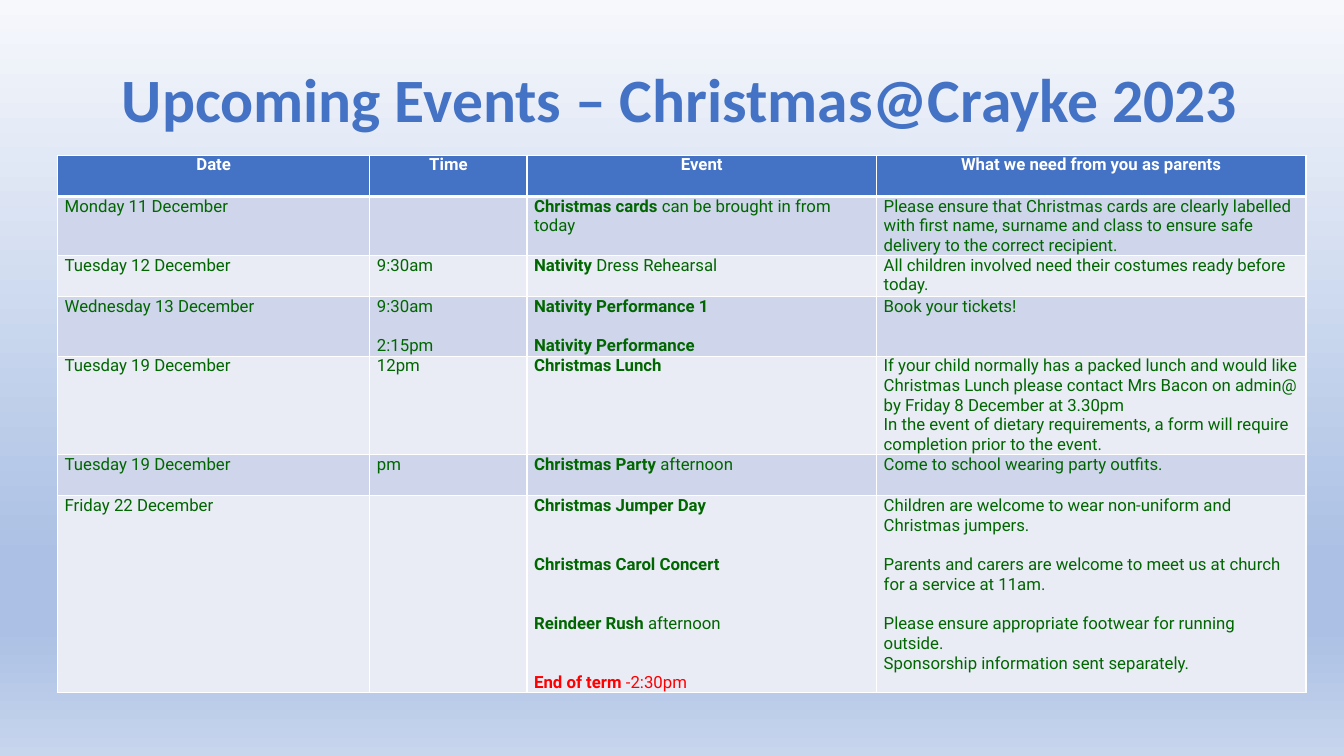
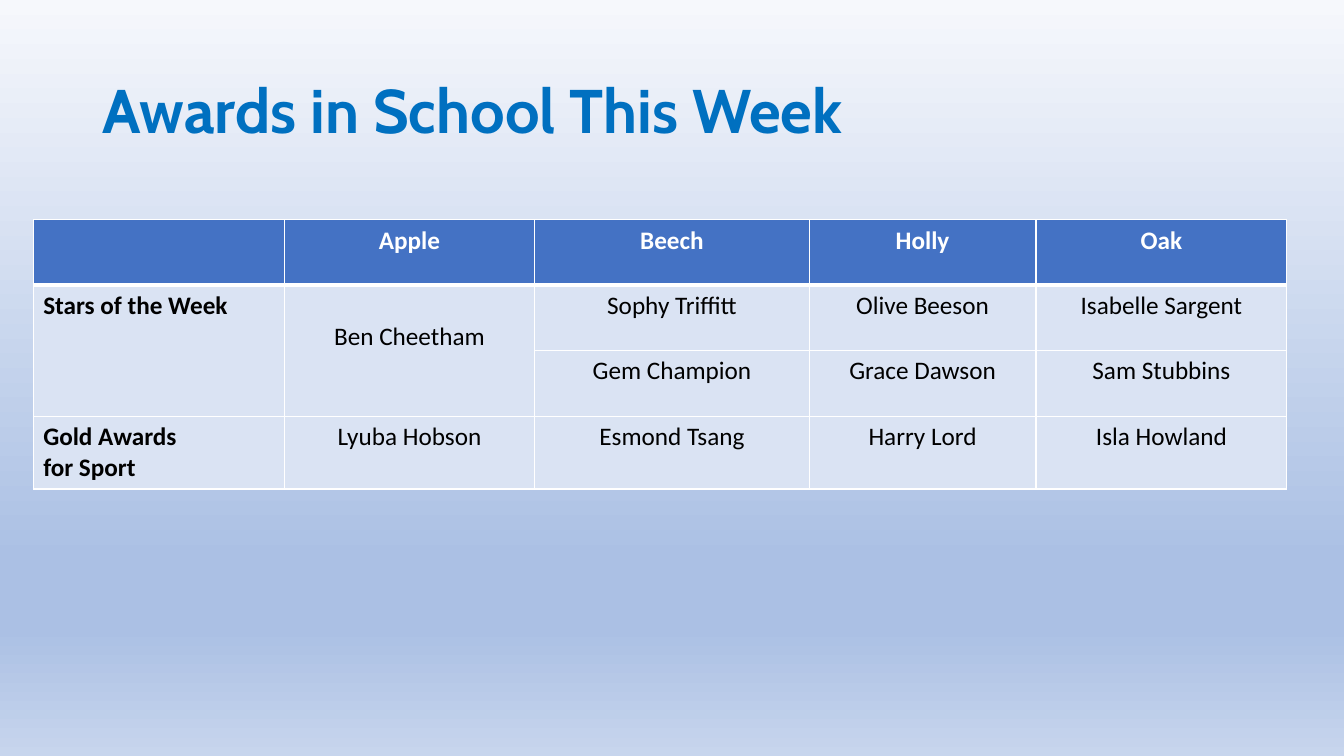
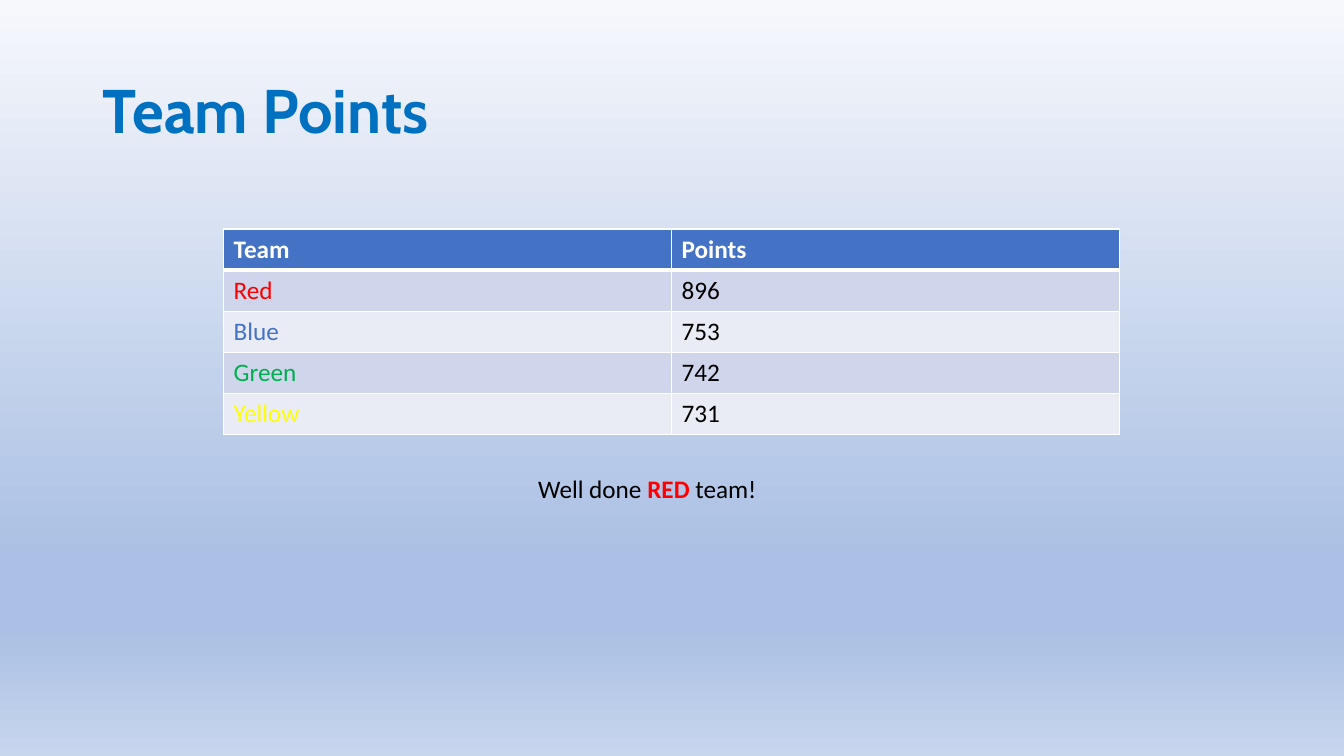
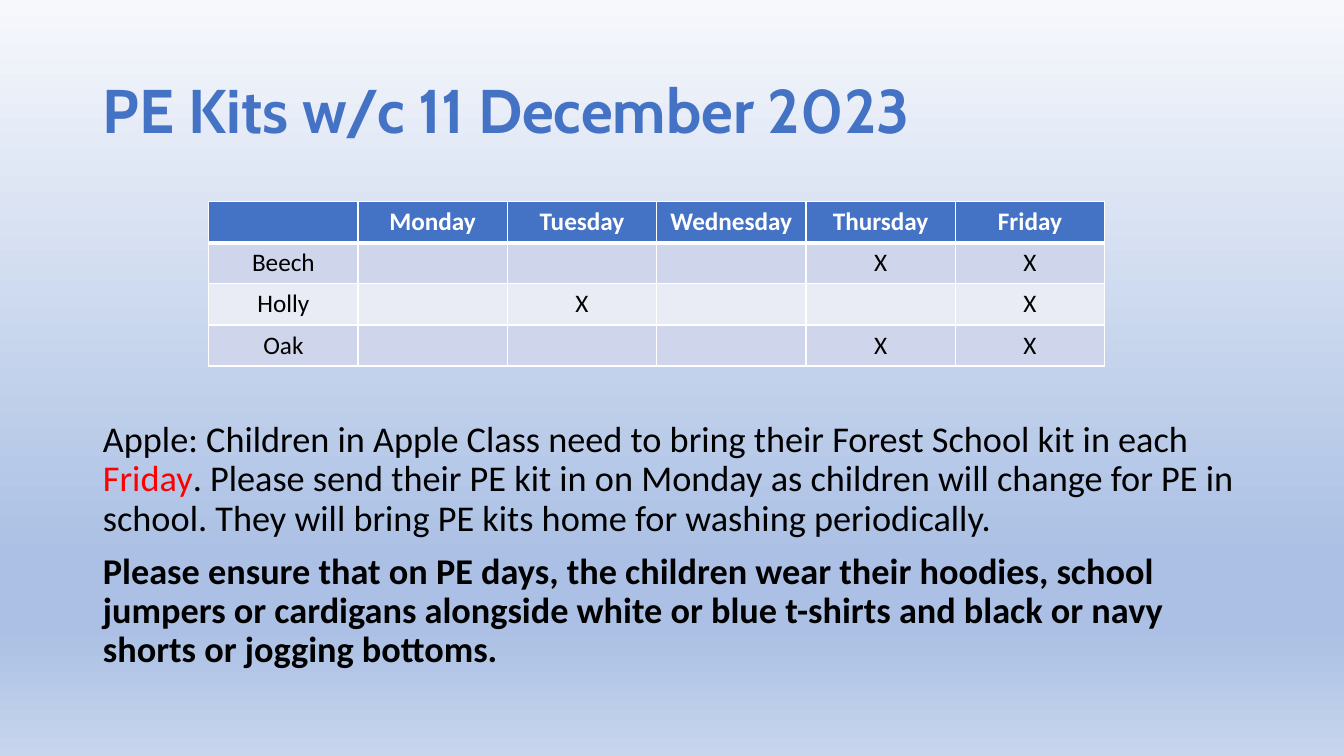
"""Build the four weekly school notice slides."""
from dataclasses import dataclass

from lxml import etree
from pptx import Presentation
from pptx import util as u
from pptx.dml.color import RGBColor
from pptx.enum import text
from pptx.oxml.ns import qn

COLOURS = {
    "head": "4472C4", "title": "0070C0", "white": "FFFFFF", "black": "000000",
    "band": "CFD5EA", "pale": "E9EBF5", "award": "DAE3F3", "festive": "006600",
    "red": "FF0000", "green": "00B050", "yellow": "FFFF00",
    "sky": "F6F8FC", "dusk": "ABC0E4", "mist": "C7D5ED",
}
BACKDROP = [(0, "sky"), (74, "dusk"), (83, "dusk"), (100, "mist")]
LEFT, CENTRE = text.PP_ALIGN.LEFT, text.PP_ALIGN.CENTER
BLANK_LINE = 14.06


@dataclass
class Box:
    """A region of the page, in centimetres."""
    left: float
    top: float
    width: float
    height: float

    def place(self):
        """Return the box as lengths."""
        return [u.Cm(n) for n in (self.left, self.top, self.width, self.height)]


@dataclass
class Span:
    """A stretch of text with its own weight and colour."""
    words: str
    bold: bool = False
    colour: str = ""


@dataclass
class Line:
    """A paragraph of spans with a gap in points above it."""
    spans: list
    gap: float = 0


@dataclass
class Look:
    """The styling of one table."""
    bands: tuple = ("band", "pale")
    font: str = "Calibri"
    size: float = 18
    colour: str = "black"
    head_align: int = CENTRE
    aligns: tuple = (CENTRE,)
    margins: tuple = (0.25, 0.13)


TITLE = Box(2.34, 1.02, 29.21, 3.68)


def rgb(name):
    """Look up a colour."""
    return RGBColor.from_string(COLOURS[name])


def bold(words, gap=0, colour=""):
    """Make a bold line."""
    return Line([Span(words, True, colour)], gap)


def mixed(strong, plain, gap=0, colour=""):
    """Make a line that starts bold and goes on plain."""
    return Line([Span(strong, True, colour), Span(plain, False, colour)], gap)


def write(frame, lines, font, size, colour, align=LEFT, strong=False):
    """Fill a text frame with strings or lines."""
    for index, line in enumerate(lines):
        if isinstance(line, str):
            line = Line([Span(line, strong)])
        para = frame.paragraphs[0] if index == 0 else frame.add_paragraph()
        para.alignment = align
        para.font.name, para.font.size = font, u.Pt(size)
        if line.gap:
            para.space_before = u.Pt(line.gap)
        for part in line.spans:
            span = para.add_run()
            span.text = part.words
            span.font.bold = part.bold
            span.font.color.rgb = rgb(part.colour or colour)


def set_backdrop(master):
    """Give every slide the shared gradient."""
    fill = master.background.fill
    fill.gradient()
    fill.gradient_angle = 270
    stops = master.element.find(".//" + qn("p:bg")).find(".//" + qn("a:gsLst"))
    for stop in list(stops):
        stops.remove(stop)
    for percent, name in BACKDROP:
        stop = etree.SubElement(stops, qn("a:gs"), pos=str(percent * 1000))
        etree.SubElement(stop, qn("a:srgbClr"), val=COLOURS[name])


def add_page(deck, heading, layout=5, box=TITLE, font="Cabin", colour="title"):
    """Add a slide and its title."""
    page = deck.slides.add_slide(deck.slide_layouts[layout])
    title = page.shapes.title
    title.left, title.top, title.width, title.height = box.place()
    title.text_frame.vertical_anchor = text.MSO_ANCHOR.MIDDLE
    write(title.text_frame, [heading], font, 44, colour, strong=True)
    title.text_frame.paragraphs[0].line_spacing = 0.9
    return page


def add_borders(cell, top, bottom):
    """Draw white cell borders of the given widths in points."""
    sides = {"lnL": 1, "lnR": 1, "lnT": top, "lnB": bottom}
    props = cell._tc.get_or_add_tcPr()
    for index, (side, width) in enumerate(sides.items()):
        edge = etree.Element(qn("a:" + side), w=str(u.Pt(width)))
        fill = etree.SubElement(edge, qn("a:solidFill"))
        etree.SubElement(fill, qn("a:srgbClr"), val=COLOURS["white"])
        props.insert(index, edge)


def add_grid(page, box, columns, heights, rows, look):
    """Add a table whose columns and rows share out the box."""
    table = page.shapes.add_table(len(rows), len(columns), *box.place()).table
    for column, share in zip(table.columns, columns):
        column.width = u.Cm(box.width * share / sum(columns))
    for row, share in zip(table.rows, heights):
        row.height = u.Cm(box.height * share / sum(heights))
    for r, row in enumerate(rows):
        head = r == 0
        for c, content in enumerate(row):
            cell = table.cell(r, c)
            cell.margin_left = cell.margin_right = u.Cm(look.margins[0])
            cell.margin_top = cell.margin_bottom = u.Cm(look.margins[1])
            cell.fill.solid()
            cell.fill.fore_color.rgb = rgb("head" if head else look.bands[(r - 1) % len(look.bands)])
            add_borders(cell, 3 if r == 1 else 1, 3 if head else 1)
            lines = content if isinstance(content, list) else [content] if content else [Line([])]
            align = look.head_align if head else look.aligns[min(c, len(look.aligns) - 1)]
            write(cell.text_frame, lines, look.font, look.size,
                  "white" if head else look.colour, align, head)
    return table


def events_page(deck):
    """Build the list of Christmas events."""
    page = add_page(deck, "Upcoming Events – Christmas@Crayke 2023",
                    box=Box(2.82, 0.74, 29.21, 3.68), font="Calibri", colour="head")
    double = 2 * BLANK_LINE
    rows = [
        ["Date", "Time", "Event", "What we need from you as parents"],
        ["Monday 11 December", "",
         [mixed("Christmas cards", " can be brought in from today")],
         "Please ensure that Christmas cards are clearly labelled with first name, "
         "surname and class to ensure safe delivery to the correct recipient."],
        ["Tuesday 12 December", "9:30am", [mixed("Nativity ", "Dress Rehearsal")],
         "All children involved need their costumes ready before today."],
        ["Wednesday 13 December", ["9:30am", Line([Span("2:15pm")], BLANK_LINE)],
         [bold("Nativity Performance 1"), bold("Nativity Performance", BLANK_LINE)],
         "Book your tickets!"],
        ["Tuesday 19 December", "12pm", [bold("Christmas Lunch")],
         ["If your child normally has a packed lunch and would like Christmas Lunch "
          "please contact Mrs Bacon on admin@ by Friday 8 December at 3.30pm",
          "In the event of dietary requirements, a form will require completion "
          "prior to the event."]],
        ["Tuesday 19 December", "pm", [mixed("Christmas Party", " afternoon")],
         "Come to school wearing party outfits."],
        ["Friday 22 December", "",
         [bold("Christmas Jumper Day"), bold("Christmas Carol Concert", double),
          mixed("Reindeer Rush ", "afternoon", double),
          mixed("End of term", " -2:30pm", double, "red")],
         ["Children are welcome to wear non-uniform and Christmas jumpers.",
          Line([Span("Parents and carers are welcome to meet us at church for a "
                     "service at 11am.")], BLANK_LINE),
          Line([Span("Please ensure appropriate footwear for running outside.")], BLANK_LINE),
          "Sponsorship information sent separately."]],
    ]
    look = Look(font="Roboto", size=12, colour="festive", aligns=(LEFT,), margins=(0.18, 0))
    add_grid(page, Box(1.45, 3.91, 31.46, 13.52), [7.87, 3.96, 8.81, 10.82],
             [1.04, 1.48, 1.04, 1.5, 2.48, 1.04, 4.94], rows, look)


def awards_page(deck):
    """Build the table of weekly awards."""
    page = add_page(deck, "Awards in School This Week")
    rows = [
        ["", "Apple", "Beech", "Holly", "Oak"],
        [[bold("Stars of the Week")], "Ben Cheetham", "Sophy Triffitt",
         "Olive Beeson", "Isabelle Sargent"],
        ["", "", "Gem Champion", "Grace Dawson", "Sam Stubbins"],
        [[bold("Gold Awards"), bold("for Sport")], "Lyuba Hobson", "Esmond Tsang",
         "Harry Lord", "Isla Howland"],
    ]
    table = add_grid(page, Box(0.84, 5.54, 31.59, 6.78), [6.32, 6.32, 6.91, 5.72, 6.32],
                     [1.65, 1.65, 1.65, 1.83], rows,
                     Look(bands=("award",), aligns=(LEFT, CENTRE)))
    for column in (0, 1):
        table.cell(1, column).merge(table.cell(2, column))
    table.cell(1, 1).margin_top = u.Cm(0.91)


def points_page(deck):
    """Build the team scores and the message below them."""
    page = add_page(deck, "Team Points")
    scores = [("Red", "red", "896"), ("Blue", "head", "753"),
              ("Green", "green", "742"), ("Yellow", "yellow", "731")]
    rows = [["Team", "Points"]]
    rows += [[[Line([Span(team, colour=colour)])], points] for team, colour, points in scores]
    add_grid(page, Box(5.64, 5.77, 22.58, 5.15), [1] * 2, [1] * 5, rows,
             Look(head_align=LEFT, aligns=(LEFT,)))
    message = page.shapes.add_textbox(*Box(13.31, 11.81, 7.24, 1.02).place())
    message.text_frame.word_wrap = True
    praise = Line([Span("Well done "), Span("RED", True, "red"), Span(" team!")])
    write(message.text_frame, [praise], "Calibri", 18, "black")


def add_body(page, box, lines):
    """Fill the body placeholder with plain paragraphs."""
    body = page.placeholders[1]
    body.left, body.top, body.width, body.height = box.place()
    frame = body.text_frame
    frame.auto_size = text.MSO_AUTO_SIZE.NONE
    write(frame, lines, "Calibri", 25.9, "black")
    for para in frame.paragraphs:
        para.line_spacing, para.space_before = 0.9, u.Pt(10)
        props = para._p.get_or_add_pPr()
        props.set("marL", "0")
        props.set("indent", "0")
        bullet = etree.Element(qn("a:buNone"))
        props.find(qn("a:spcBef")).addnext(bullet)


def kits_page(deck):
    """Build the PE kit days and the advice below them."""
    page = add_page(deck, "PE Kits w/c 11 December 2023", layout=1, colour="head")
    add_body(page, Box(2.34, 10.49, 29.21, 6.68), [
        Line([Span("Apple: Children in Apple Class need to bring their Forest School "
                   "kit in each "), Span("Friday", colour="red"),
              Span(". Please send their PE kit in on Monday as children will change "
                   "for PE in school. They will bring PE kits home for washing "
                   "periodically.")]),
        bold("Please ensure that on PE days, the children wear their hoodies, school "
             "jumpers or cardigans alongside white or blue t-shirts and black or navy "
             "shorts or jogging bottoms."),
    ])
    days = ["Monday", "Tuesday", "Wednesday", "Thursday", "Friday"]
    kit_days = {"Beech": ("Thursday", "Friday"), "Holly": ("Tuesday", "Friday"),
                "Oak": ("Thursday", "Friday")}
    rows = [[""] + days]
    rows += [[team] + ["X" if day in chosen else "" for day in days]
             for team, chosen in kit_days.items()]
    add_grid(page, Box(5.26, 5.08, 22.58, 4.12), [1] * 6, [1] * 4, rows, Look())


def main():
    """Build and save the deck."""
    deck = Presentation()
    deck.slide_width, deck.slide_height = u.Cm(33.87), u.Cm(19.05)
    set_backdrop(deck.slide_master)
    for build in (events_page, awards_page, points_page, kits_page):
        build(deck)
    deck.save("out.pptx")


if __name__ == "__main__":
    main()
